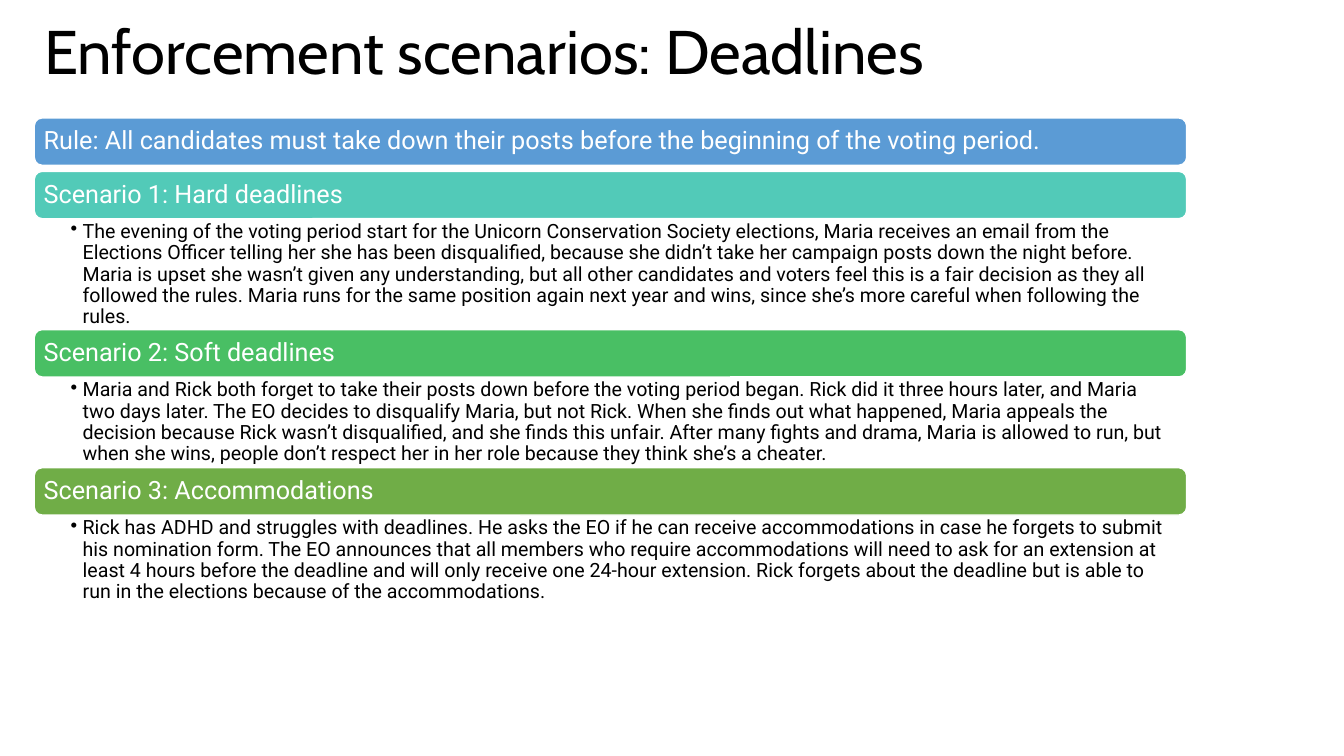
from lxml import etree
from pptx import Presentation
from pptx import util as u
from pptx.dml.color import RGBColor
from pptx.enum import shapes, text
from pptx.oxml.ns import qn

PX = 9144
BLACK = RGBColor(0x00, 0x00, 0x00)
WHITE = RGBColor(0xFF, 0xFF, 0xFF)
BLUE = RGBColor(0x5B, 0x9B, 0xD5)
TEAL = RGBColor(0x52, 0xCA, 0xB8)
GREEN = RGBColor(0x49, 0xBF, 0x64)
OLIVE = RGBColor(0x70, 0xAD, 0x47)

LEFT, WIDTH = 34, 1143
RULE_TOP, BAR_HEIGHT, RULE_GAP = 117, 47, 6

TITLE = "Enforcement scenarios: Deadlines"
RULE = "Rule: All candidates must take down their posts before the beginning of the voting period."
SCENARIOS = [
    ("Scenario 1: Hard deadlines", TEAL, 110,
     "The evening of the voting period start for the Unicorn Conservation Society elections, "
     "Maria receives an email from the Elections Officer telling her she has been disqualified, "
     "because she didn’t take her campaign posts down the night before. Maria is upset she "
     "wasn’t given any understanding, but all other candidates and voters feel this is a fair "
     "decision as they all followed the rules. Maria runs for the same position again next year "
     "and wins, since she’s more careful when following the rules."),
    ("Scenario 2: Soft deadlines", GREEN, 90,
     "Maria and Rick both forget to take their posts down before the voting period began. Rick "
     "did it three hours later, and Maria two days later. The EO decides to disqualify Maria, "
     "but not Rick. When she finds out what happened, Maria appeals the decision because Rick "
     "wasn’t disqualified, and she finds this unfair. After many fights and drama, Maria is "
     "allowed to run, but when she wins, people don’t respect her in her role because they "
     "think she’s a cheater."),
    ("Scenario 3: Accommodations", OLIVE, 90,
     "Rick has ADHD and struggles with deadlines. He asks the EO if he can receive "
     "accommodations in case he forgets to submit his nomination form. The EO announces that "
     "all members who require accommodations will need to ask for an extension at least 4 hours "
     "before the deadline and will only receive one 24-hour extension. Rick forgets about the "
     "deadline but is able to run in the elections because of the accommodations."),
]


def px(*values):
    return [u.Emu(v * PX) for v in values]


def set_all(obj, formats):
    for name, value in formats.items():
        setattr(obj, name, value)


def write(sp, words, insets, anchor, font, color):
    tf = sp.text_frame
    left, top, right, bottom = px(*insets)
    set_all(tf, {"word_wrap": True, "vertical_anchor": anchor,
                 "margin_left": left, "margin_top": top,
                 "margin_right": right, "margin_bottom": bottom})
    p = tf.paragraphs[0]
    set_all(p, {"alignment": text.PP_ALIGN.LEFT, "line_spacing": 0.9})
    r = p.add_run()
    r.text = words
    set_all(r.font, font)
    r.font.color.rgb = color
    return p


def add_title(s, words):
    sp = s.shapes.add_textbox(*px(LEFT, 0, 1090, 109))
    write(sp, words, (10, 5, 10, 5), text.MSO_ANCHOR.MIDDLE,
          {"name": "Cabin", "size": u.Pt(44)}, BLACK)


def add_bar(s, top, words, color):
    sp = s.shapes.add_shape(shapes.MSO_SHAPE.ROUNDED_RECTANGLE,
                            *px(LEFT, top, WIDTH, BAR_HEIGHT))
    sp.shadow.inherit = False
    sp.fill.solid()
    sp.fill.fore_color.rgb = color
    sp.line.color.rgb = WHITE
    sp.line.width = u.Pt(1)
    write(sp, words, (7, 7, 7, 7), text.MSO_ANCHOR.MIDDLE,
          {"name": "Roboto", "size": u.Pt(18)}, WHITE)


def add_story(s, top, height, words):
    sp = s.shapes.add_textbox(*px(LEFT, top, WIDTH, height))
    p = write(sp, words, (36, 3, 14, 3), text.MSO_ANCHOR.TOP,
              {"name": "Roboto", "size": u.Pt(14)}, BLACK)
    p.level = 1
    pPr = p._p.get_or_add_pPr()
    pPr.set("marL", str(12 * PX))
    pPr.set("indent", str(-12 * PX))
    etree.SubElement(pPr, qn("a:buChar"), char="•")


def main():
    prs = Presentation()
    prs.slide_width, prs.slide_height = px(1333, 750)
    s = prs.slides.add_slide(prs.slide_layouts[6])
    add_title(s, TITLE)
    add_bar(s, RULE_TOP, RULE, BLUE)
    top = RULE_TOP + BAR_HEIGHT + RULE_GAP
    for heading, color, height, story in SCENARIOS:
        add_bar(s, top, heading, color)
        add_story(s, top + BAR_HEIGHT, height, story)
        top += BAR_HEIGHT + height
    prs.save("out.pptx")


if __name__ == "__main__":
    main()
